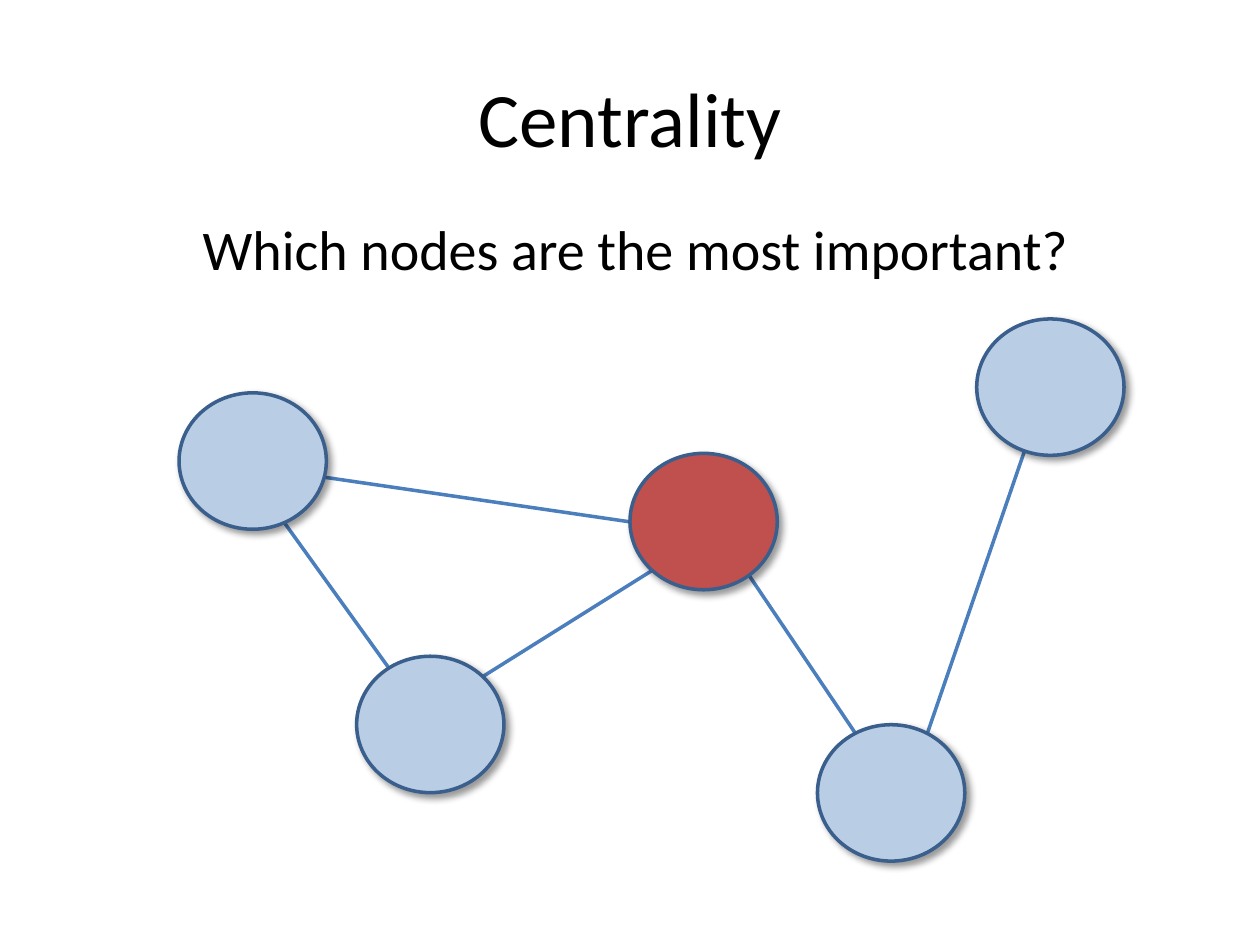
from typing import NamedTuple

from lxml.etree import SubElement
from pptx import Presentation
from pptx.dml.color import RGBColor
from pptx.enum.shapes import MSO_CONNECTOR as Connector, MSO_SHAPE as Shape
from pptx.enum.text import MSO_ANCHOR as Anchor, MSO_AUTO_SIZE as AutoSize, PP_ALIGN as Align
from pptx.oxml.ns import qn
from pptx.slide import Slide
from pptx.text.text import TextFrame
from pptx.util import Cm, Pt

BLACK = RGBColor(0x00, 0x00, 0x00)
PALE_BLUE = RGBColor(0xB9, 0xCD, 0xE5)
CENTRAL_RED = RGBColor(0xC0, 0x50, 0x4D)
OUTLINE_BLUE = RGBColor(0x3A, 0x5F, 0x8C)
EDGE_BLUE = RGBColor(0x4B, 0x7E, 0xBC)

FONT = "Calibri"
NODE_WIDTH = Cm(2.97)
NODE_HEIGHT = Cm(2.75)
STROKE = Pt(2)


class Node(NamedTuple):
    left: float
    top: float
    fill: RGBColor = PALE_BLUE


class Edge(NamedTuple):
    start_x: float
    start_y: float
    end_x: float
    end_y: float


NODES = [
    Node(7.19, 13.23),
    Node(12.7, 9.14, CENTRAL_RED),
    Node(19.69, 6.43),
    Node(16.48, 14.61),
    Node(3.61, 7.92),
]

EDGES = [
    Edge(5.72, 10.52, 7.82, 13.44),
    Edge(5.92, 9.53, 12.7, 10.52),
    Edge(13.13, 11.51, 9.73, 13.64),
    Edge(15.04, 11.51, 17.35, 14.94),
    Edge(18.64, 14.94, 20.96, 8.2),
]


def write_centred(frame: TextFrame, wording: str, size: int) -> None:
    frame.word_wrap = True
    paragraph = frame.paragraphs[0]
    paragraph.alignment = Align.CENTER
    run = paragraph.add_run()
    run.text = wording
    run.font.name = FONT
    run.font.size = Pt(size)
    run.font.color.rgb = BLACK


def draw_edge(slide: Slide, edge: Edge) -> None:
    link = slide.shapes.add_connector(Connector.STRAIGHT, *map(Cm, edge))
    link.line.color.rgb = EDGE_BLUE
    link.line.width = STROKE
    SubElement(link._element.spPr, qn("a:effectLst"))


def draw_node(slide: Slide, node: Node) -> None:
    circle = slide.shapes.add_shape(
        Shape.OVAL, Cm(node.left), Cm(node.top), NODE_WIDTH, NODE_HEIGHT
    )
    circle.fill.solid()
    circle.fill.fore_color.rgb = node.fill
    circle.line.color.rgb = OUTLINE_BLUE
    circle.line.width = STROKE
    circle.shadow.inherit = False
    effects = circle._element.spPr.find(qn("a:effectLst"))
    shadow = SubElement(
        effects, qn("a:outerShdw"),
        blurRad=str(Pt(4)), dist=str(Pt(3)), dir=str(45 * 60000),
        algn="tl", rotWithShape="0",
    )
    tint = SubElement(shadow, qn("a:srgbClr"), val=str(BLACK))
    SubElement(tint, qn("a:alpha"), val="40000")


def main() -> None:
    deck = Presentation()
    deck.slide_width = Cm(25.4)
    deck.slide_height = Cm(19.05)
    slide = deck.slides.add_slide(deck.slide_layouts[5])

    title = slide.shapes.title
    title.left, title.top, title.width, title.height = map(Cm, (1.27, 0.76, 22.86, 3.18))
    title.text_frame.vertical_anchor = Anchor.MIDDLE
    write_centred(title.text_frame, "Centrality", 44)

    for edge in EDGES:
        draw_edge(slide, edge)
    for node in NODES:
        draw_node(slide, node)

    question = slide.shapes.add_textbox(Cm(2.97), Cm(4.19), Cm(19.69), Cm(1.63))
    question.text_frame.auto_size = AutoSize.SHAPE_TO_FIT_TEXT
    write_centred(question.text_frame, "Which nodes are the most important?", 32)

    deck.save("out.pptx")


if __name__ == "__main__":
    main()
